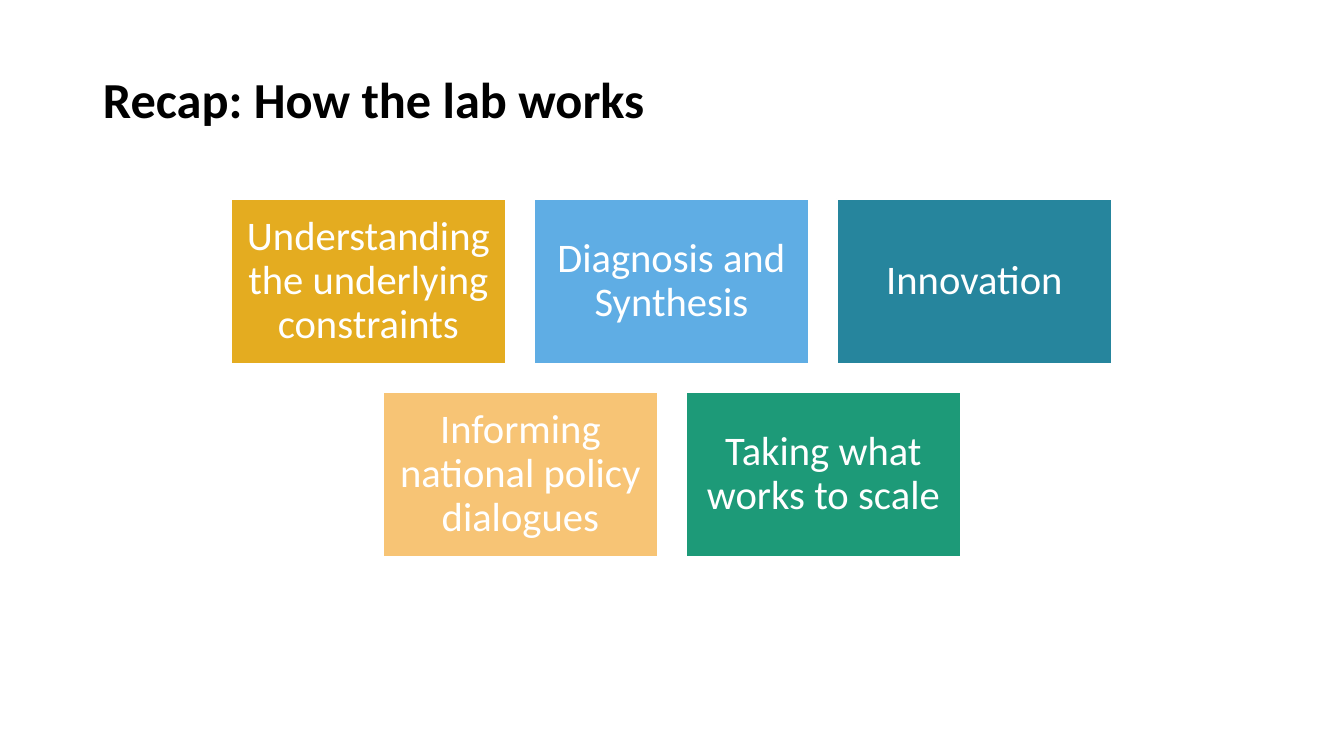
from pptx import Presentation
from pptx.dml.color import RGBColor as RGB
from pptx.enum.shapes import MSO_SHAPE as Shape
from pptx.enum.text import MSO_ANCHOR as Anchor, MSO_AUTO_SIZE as Fit, PP_ALIGN as Align
from pptx.util import Pt

PX = 914400 / 100.8  # EMU in one px
WIDE, HIGH = 1344, 756
COLORS = {
    "gold": "E4AC20", "sky": "5FADE4", "teal": "26859D",
    "sand": "F7C475", "green": "1D9A78", "white": "FFFFFF", "black": "000000",
}


def px(*sizes):
    return [round(size * PX) for size in sizes]


def style(para, size, color, bold=False):
    para.line_spacing = 0.9
    font = para.font
    font.name, font.size, font.bold = "Calibri", Pt(size), bold
    font.color.rgb = RGB.from_string(COLORS[color])


deck = Presentation()
deck.slide_width, deck.slide_height = px(WIDE, HIGH)
slide = deck.slides.add_slide(deck.slide_layouts[6])

# Title
title = slide.shapes.add_textbox(*px(93, 70, 568, 66)).text_frame
title.word_wrap = False
title.auto_size = Fit.SHAPE_TO_FIT_TEXT
title.text = "Recap: How the lab works"
style(title.paragraphs[0], 36, "black", bold=True)

# Steps of the lab, each row centred on the slide
BOX_W, BOX_H, GAP, TOP = 275, 165, 28, 199
ROWS = [
    [("Understanding the underlying constraints", "gold"),
     ("Diagnosis and Synthesis", "sky"),
     ("Innovation", "teal")],
    [("Informing national policy dialogues", "sand"),
     ("Taking what works to scale", "green")],
]
for row, steps in enumerate(ROWS):
    span = len(steps) * (BOX_W + GAP) - GAP
    left = (WIDE - span) // 2
    top = TOP + row * (BOX_H + GAP)
    for col, (label, color) in enumerate(steps):
        x = left + col * (BOX_W + GAP)
        box = slide.shapes.add_shape(Shape.RECTANGLE, *px(x, top, BOX_W, BOX_H))
        box.shadow.inherit = False
        box.fill.solid()
        box.fill.fore_color.rgb = RGB.from_string(COLORS[color])
        box.line.color.rgb = RGB.from_string(COLORS["white"])
        box.line.width = Pt(1)
        frame = box.text_frame
        frame.word_wrap = True
        frame.vertical_anchor = Anchor.MIDDLE
        (frame.margin_left, frame.margin_top,
         frame.margin_right, frame.margin_bottom) = px(12, 12, 12, 12)
        frame.text = label
        para = frame.paragraphs[0]
        para.alignment = Align.CENTER
        style(para, 29, "white")

deck.save("out.pptx")
